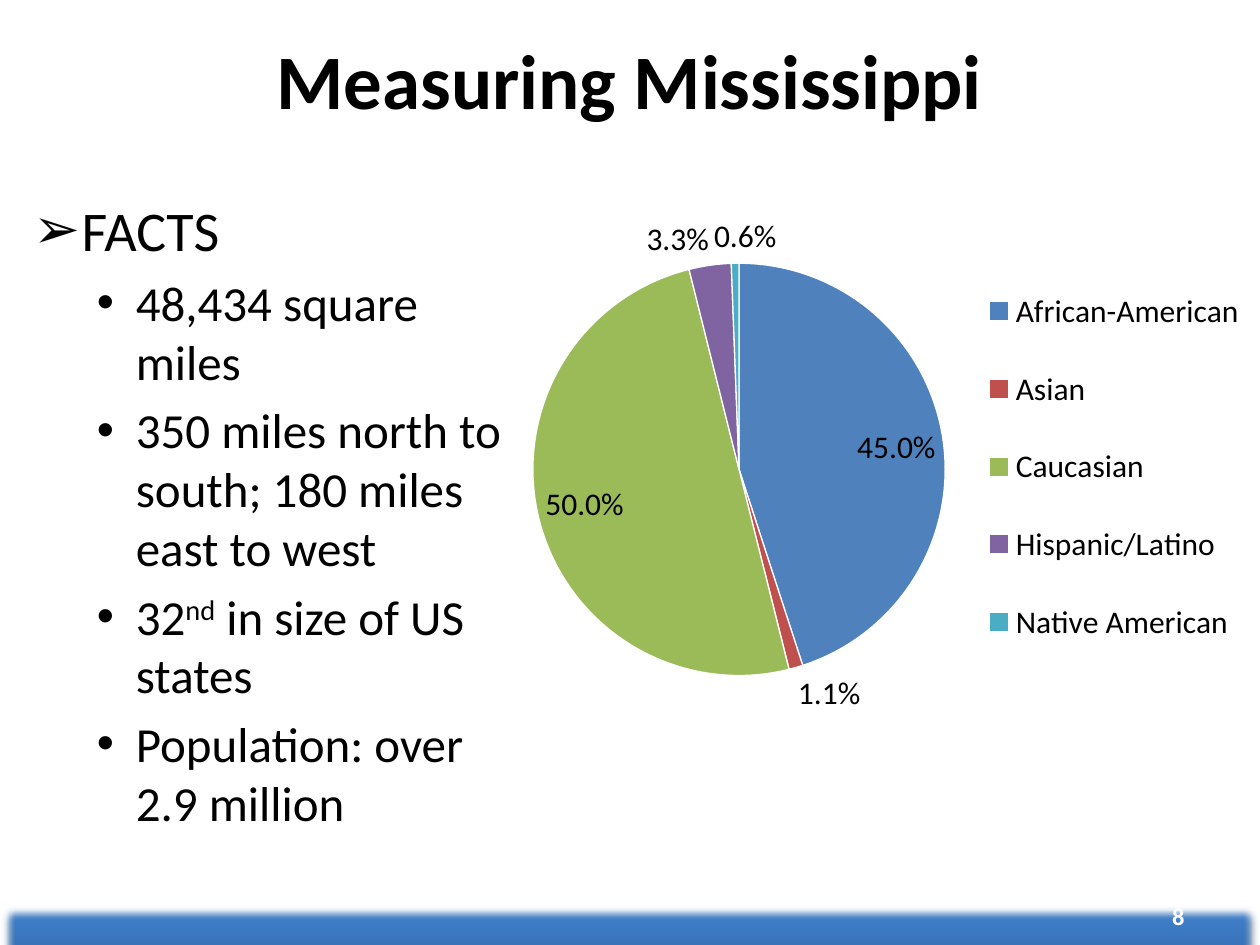
import lxml.etree
import pptx
import pptx.chart.data
import pptx.dml.color
import pptx.enum.chart
import pptx.enum.shapes
import pptx.enum.text
import pptx.oxml
import pptx.oxml.ns
import pptx.util

Inches = pptx.util.Inches
Pt = pptx.util.Pt
qn = pptx.oxml.ns.qn
ALIGN = pptx.enum.text.PP_ALIGN
ANCHOR = pptx.enum.text.MSO_ANCHOR
FONT = "Calibri"
DRAWING = 'xmlns:a="http://schemas.openxmlformats.org/drawingml/2006/main"'

FACTS = [
    ["48,434 square miles"],
    ["350 miles north to south; 180 miles east to west"],
    ["32", "nd", " in size of US states"],
    ["Population: over 2.9 million"],
]
GROUPS = [
    ("African-American", 45, "4F81BD"),
    ("Asian", 1.1, "C0504D"),
    ("Caucasian", 50, "9BBB59"),
    ("Hispanic/Latino", 3.3, "8064A2"),
    ("Native American", 0.6, "4BACC6"),
]


def color(value):
    return pptx.dml.color.RGBColor.from_string(value)


def style(font, size, value="000000", bold=False):
    font.name = FONT
    font.size = Pt(size)
    font.bold = bold
    font.color.rgb = color(value)


def add_frame(page, left, top, width, height, anchor=ANCHOR.TOP):
    box = page.shapes.add_textbox(left, top, width, height)
    box.text_frame.word_wrap = True
    box.text_frame.vertical_anchor = anchor
    return box.text_frame


def add_line(page, area, text, size, value, align, anchor):
    frame = add_frame(page, *area, anchor)
    frame.text = text
    para = frame.paragraphs[0]
    para.alignment = align
    style(para.runs[0].font, size, value, True)


def set_bullet(para, mark, margin, hanging):
    properties = para._p.get_or_add_pPr()
    properties.set("marL", str(Inches(margin)))
    properties.set("indent", str(-Inches(hanging)))
    lxml.etree.SubElement(properties, qn("a:buFont")).set("typeface", "Arial")
    lxml.etree.SubElement(properties, qn("a:buChar")).set("char", mark)


def add_facts(page, left, top, width, height):
    frame = add_frame(page, left, top, width, height)
    heading = frame.paragraphs[0]
    heading.text = "FACTS"
    set_bullet(heading, "➢", 0.38, 0.38)
    style(heading.runs[0].font, 32)
    for pieces in FACTS:
        para = frame.add_paragraph()
        para.level = 1
        set_bullet(para, "•", 0.81, 0.31)
        para.space_before = Pt(5.6)
        for piece in pieces:
            span = para.add_run()
            span.text = piece
            style(span.font, 28)
            if piece == "nd":
                span.font._element.set("baseline", "30000")


def add_band(page, left, top, width, height):
    band = page.shapes.add_shape(
        pptx.enum.shapes.MSO_SHAPE.RECTANGLE, left, top, width, height)
    band.line.fill.background()
    stops = "".join(
        f'<a:gs pos="{place * 1000}"><a:srgbClr val="{value}"/></a:gs>'
        for place, value in [(0, "2F5F99"), (80, "3D7CC7"), (100, "3A7CCB")])
    gradient = pptx.oxml.parse_xml(
        f'<a:gradFill {DRAWING} rotWithShape="1"><a:gsLst>{stops}</a:gsLst>'
        '<a:lin ang="16200000" scaled="0"/></a:gradFill>')
    effects = pptx.oxml.parse_xml(
        f'<a:effectLst {DRAWING}>'
        f'<a:outerShdw blurRad="{Pt(3.1)}" dist="{Pt(1.8)}" dir="5400000" rotWithShape="0">'
        '<a:srgbClr val="000000"><a:alpha val="35000"/></a:srgbClr></a:outerShdw>'
        f'<a:softEdge rad="{Pt(5)}"/></a:effectLst>')
    properties = band._element.spPr
    properties.find(qn("a:prstGeom")).addnext(gradient)
    properties.find(qn("a:ln")).addnext(effects)


def set_layout(element, before, inner, **portions):
    for old in element.findall(qn("c:layout")):
        element.remove(old)
    layout = lxml.etree.Element(qn("c:layout"))
    manual = lxml.etree.SubElement(layout, qn("c:manualLayout"))
    settings = {"xMode": "edge", "yMode": "edge", **portions}
    if inner:
        settings = {"layoutTarget": "inner", **settings}
    for name, value in settings.items():
        lxml.etree.SubElement(manual, qn(f"c:{name}")).set("val", str(value))
    if before is None:
        element.insert(0, layout)
    else:
        before.addnext(layout)


def add_population_chart(page, left, top, width, height):
    data = pptx.chart.data.CategoryChartData()
    data.categories = [group[0] for group in GROUPS]
    data.add_series("Series 1", [group[1] for group in GROUPS])
    chart = page.shapes.add_chart(
        pptx.enum.chart.XL_CHART_TYPE.PIE, left, top, width, height, data).chart
    chart.has_title = False
    style(chart.font, 18)
    chart.has_legend = True
    legend = chart.legend
    legend.position = pptx.enum.chart.XL_LEGEND_POSITION.RIGHT
    legend.include_in_layout = False
    style(legend.font, 18)
    set_layout(legend._element, legend._element.find(qn("c:legendPos")), False,
               x=0.63, y=0.1, w=0.36, h=0.8)
    plot = chart.plots[0]
    set_layout(plot._element.getparent(), None, True, x=0.05, y=0.12, w=0.54, h=0.77)
    plot.vary_by_categories = True
    series = plot.series[0]
    labels = series.data_labels
    labels.show_percentage = True
    labels.show_value = False
    labels.number_format = "0.0%"
    labels.number_format_is_linked = False
    labels.position = pptx.enum.chart.XL_LABEL_POSITION.BEST_FIT
    style(labels.font, 18)
    for index, (_, _, value) in enumerate(GROUPS):
        point = series.points[index]
        point.format.fill.solid()
        point.format.fill.fore_color.rgb = color(value)
        point.format.line.color.rgb = color("FFFFFF")
        point.format.line.width = Pt(0.75)


def area(*lengths):
    return [Inches(length) for length in lengths]


def main():
    deck = pptx.Presentation()
    deck.slide_width, deck.slide_height = Inches(10), Inches(7.5)
    page = deck.slides.add_slide(deck.slide_layouts[6])
    add_band(page, *area(0, 7.17, 10, 0.75))
    add_line(page, area(0, 0, 10, 1.25), "Measuring Mississippi", 44, "000000",
             ALIGN.CENTER, ANCHOR.MIDDLE)
    add_facts(page, *area(0.17, 1.5, 4.08, 5.75))
    add_line(page, area(7.17, 7.1, 2.33, 0.4), "8", 14, "FFFFFF", ALIGN.RIGHT, ANCHOR.TOP)
    add_population_chart(page, *area(3.92, 1.58, 6.08, 4.25))
    deck.save("out.pptx")


if __name__ == "__main__":
    main()
